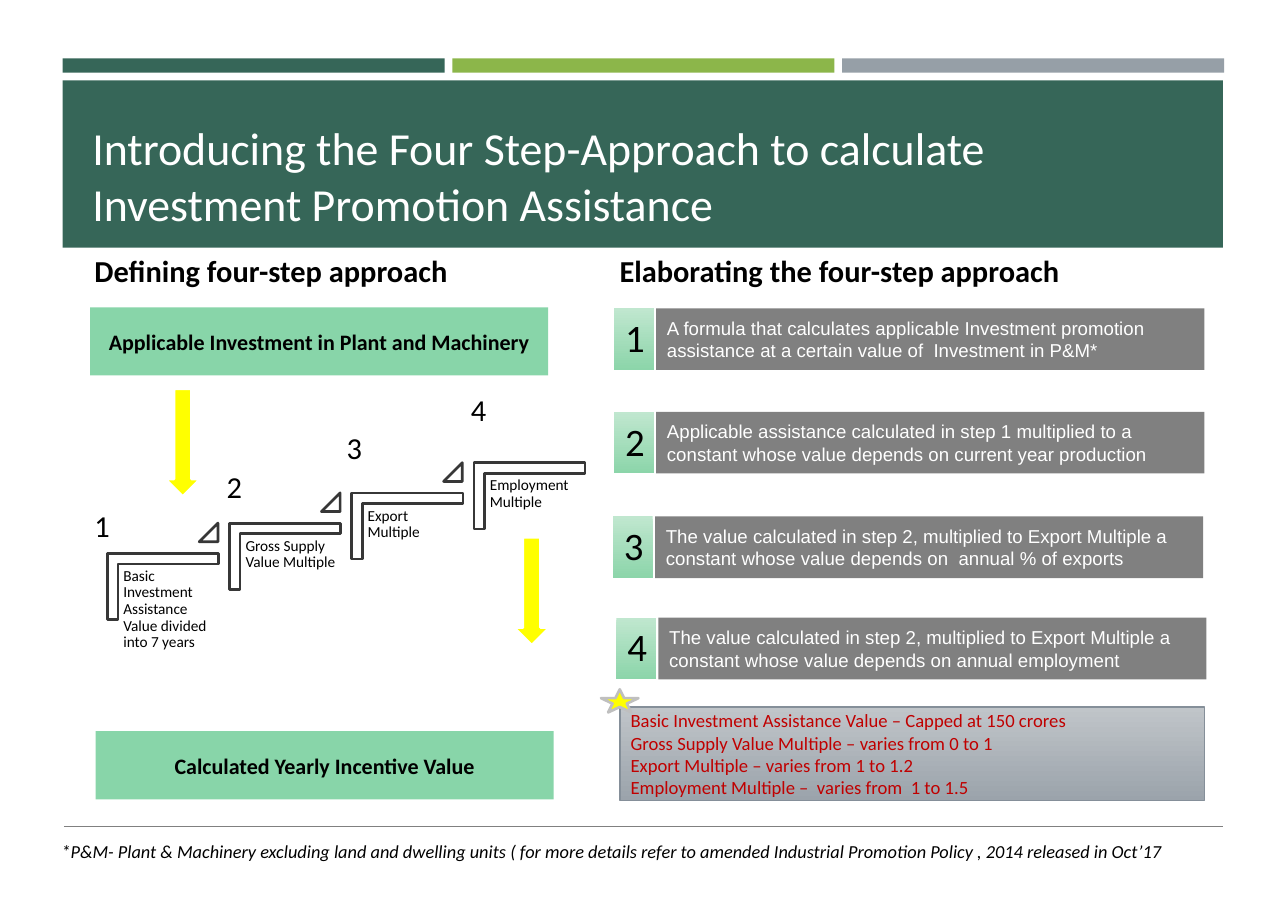
from lxml import etree
from pptx import Presentation
from pptx import util as u
from pptx.dml.color import RGBColor
from pptx.enum import shapes, text
from pptx.oxml.ns import qn

PX = u.Inches(1) // 100
S, A, V = shapes.MSO_SHAPE, text.PP_ALIGN, text.MSO_ANCHOR

GREEN = RGBColor(0x36, 0x66, 0x58)
LIME = RGBColor(0x8C, 0xB6, 0x4A)
SLATE = RGBColor(0x96, 0x9F, 0xA7)
MINT = RGBColor(0x88, 0xD5, 0xA9)
MINT_FADE = RGBColor(0xC0, 0xE7, 0xCF), RGBColor(0x8C, 0xD5, 0xAA)
SLATE_FADE = RGBColor(0xC0, 0xC5, 0xC9), RGBColor(0x9B, 0xA3, 0xAB)
SLATE_EDGE = RGBColor(0x85, 0x8F, 0x99)
GREY = RGBColor(0x80, 0x80, 0x80)
SILVER = RGBColor(0xBF, 0xBF, 0xBF)
CHARCOAL = RGBColor(0x37, 0x37, 0x37)
YELLOW = RGBColor(0xFF, 0xFF, 0x00)
RED = RGBColor(0xC0, 0x00, 0x00)
WHITE = RGBColor(0xFF, 0xFF, 0xFF)
BLACK = RGBColor(0x00, 0x00, 0x00)

TITLE = "Introducing the Four Step-Approach to calculate Investment Promotion Assistance"
HEADINGS = [("Defining four-step approach", 76), ("Elaborating the four-step approach", 553)]
# text, left, top
EXPLANATIONS = [
    ("A formula that calculates applicable Investment promotion assistance "
     "at a certain value of  Investment in P&M*", 558, 280),
    ("Applicable assistance calculated in step 1 multiplied to a constant "
     "whose value depends on current year production", 558, 374),
    ("The value calculated in step 2, multiplied to Export Multiple a constant "
     "whose value depends on  annual % of exports", 557, 469),
    ("The value calculated in step 2, multiplied to Export Multiple a constant "
     "whose value depends on annual employment", 560, 561),
]
# label paragraphs, left and top of the step number
STAIRS = [
    (["Basic Investment", "Assistance Value divided into 7 years"], 76, 456),
    (["Gross Supply", "Value Multiple"], 196, 420),
    (["Export Multiple"], 305, 385),
    (["Employment Multiple"], 418, 350),
]
RESULTS = [("Applicable Investment in Plant and Machinery", 82, 279),
           ("Calculated Yearly Incentive Value", 87, 664)]
ARROWS = [(150, 353), (467, 488)]
RANGES = [
    "Basic Investment Assistance Value – Capped at 150 crores",
    "Gross Supply Value Multiple – varies from 0 to 1",
    "Export Multiple – varies from 1 to 1.2",
    "Employment Multiple –  varies from  1 to 1.5",
]
FOOTNOTE = ("*P&M- Plant & Machinery excluding land and dwelling units ( for more details "
            "refer to amended Industrial Promotion Policy , 2014 released in Oct’17")

prs = Presentation()
prs.slide_width, prs.slide_height = 1170 * PX, 830 * PX
slide = prs.slides.add_slide(prs.slide_layouts[6])


def emu(*lengths):
    return [round(n * PX) for n in lengths]


def write(sp, lines, size, color=BLACK, name="Calibri", align=A.LEFT,
          anchor=V.TOP, spacing=None, inset=None, **style):
    tf = sp.text_frame
    tf.word_wrap = True
    tf.vertical_anchor = anchor
    if inset is not None:
        for side in ("left", "top", "right", "bottom"):
            setattr(tf, f"margin_{side}", inset * PX)
    font = {"size": u.Pt(size), "name": name, **style}
    for i, line in enumerate(lines):
        p = tf.paragraphs[0] if i == 0 else tf.add_paragraph()
        p.alignment = align
        if spacing:
            p.line_spacing = spacing
        r = p.add_run()
        r.text = line
        r.font.color.rgb = color
        for key, value in font.items():
            setattr(r.font, key, value)


def add_text(box, lines, size, **fmt):
    write(slide.shapes.add_textbox(*emu(*box)), lines, size, **fmt)


def add_shape(kind, box, fill, line=None, width=1.75, adjust=(), rotation=0):
    """Draw a preset shape; a pair of colours as fill gives a downward fade."""
    sp = slide.shapes.add_shape(kind, *emu(*box))
    sp.shadow.inherit = False
    sp.rotation = rotation
    for i, value in enumerate(adjust):
        sp.adjustments[i] = value
    if isinstance(fill, RGBColor):
        sp.fill.solid()
        sp.fill.fore_color.rgb = fill
    else:
        sp.fill.gradient()
        sp.fill.gradient_angle = 270
        for stop, color in zip(sp.fill.gradient_stops, fill):
            stop.color.rgb = color
    if line is None:
        sp.line.fill.background()
    else:
        sp.line.color.rgb = line
        sp.line.width = u.Pt(width)
    return sp


def add_header():
    for i, color in enumerate((GREEN, LIME, SLATE)):
        add_shape(S.RECTANGLE, (57 + 354 * i, 53, 347, 13), color)
    add_shape(S.RECTANGLE, (57, 73, 1054, 152), GREEN)
    add_text((74, 83, 1022, 131), [TITLE], 30, color=WHITE, anchor=V.BOTTOM)
    for heading, left in HEADINGS:
        add_text((left, 224, 520, 44), [heading], 19.9, bold=True)


def add_explanations():
    for n, (line, left, top) in enumerate(EXPLANATIONS, 1):
        sp = add_shape(S.RECTANGLE, (left + 38, top, 498, 56), GREY)
        write(sp, [line], 12.2, color=WHITE, name="Arial", anchor=V.MIDDLE)
        sp = add_shape(S.RECTANGLE, (left, top, 36, 56), MINT_FADE)
        write(sp, [str(n)], 25.4, align=A.CENTER)


def add_staircase():
    for i, (label, num_left, num_top) in enumerate(STAIRS):
        dx, dy = 111 * i, -27.4 * i
        add_shape(S.CORNER, (118 + dx, 482 + dy, 60, 101), WHITE, CHARCOAL,
                  adjust=(0.16, 0.16), rotation=90)
        add_text((108 + dx, 512 + dy, 91, 80), label, 10, spacing=0.9, inset=4)
        if i < len(STAIRS) - 1:
            add_shape(S.ISOSCELES_TRIANGLE, (181 + dx, 475 + dy, 17, 17),
                      WHITE, CHARCOAL, adjust=(1,))
        add_text((num_left, num_top, 59, 44), [str(i + 1)], 19.9)


def add_results():
    for line, left, top in RESULTS:
        sp = add_shape(S.RECTANGLE, (left, top, 416, 62), MINT)
        write(sp, [line], 14.4, align=A.CENTER, anchor=V.MIDDLE, bold=True)
    for left, top in ARROWS:
        add_shape(S.DOWN_ARROW, (left, top, 32, 98), YELLOW, WHITE)


def add_ranges():
    sp = add_shape(S.RECTANGLE, (563, 642, 531, 85), SLATE_FADE, SLATE_EDGE, 1)
    write(sp, RANGES, 12.2, color=RED, anchor=V.MIDDLE)
    add_shape(S.STAR_5_POINT, (546, 626, 34, 21), YELLOW, SILVER)


def add_footer():
    rule = slide.shapes.add_connector(shapes.MSO_CONNECTOR.STRAIGHT, *emu(58, 750, 1111, 750))
    rule.line.color.rgb = GREY
    rule.line.width = u.Pt(0.25)
    etree.SubElement(rule._element.spPr, qn("a:effectLst"))
    add_text((46, 758, 1078, 30), [FOOTNOTE], 12, italic=True)


def main():
    add_header()
    add_explanations()
    add_staircase()
    add_results()
    add_ranges()
    add_footer()
    prs.save("out.pptx")


if __name__ == "__main__":
    main()
